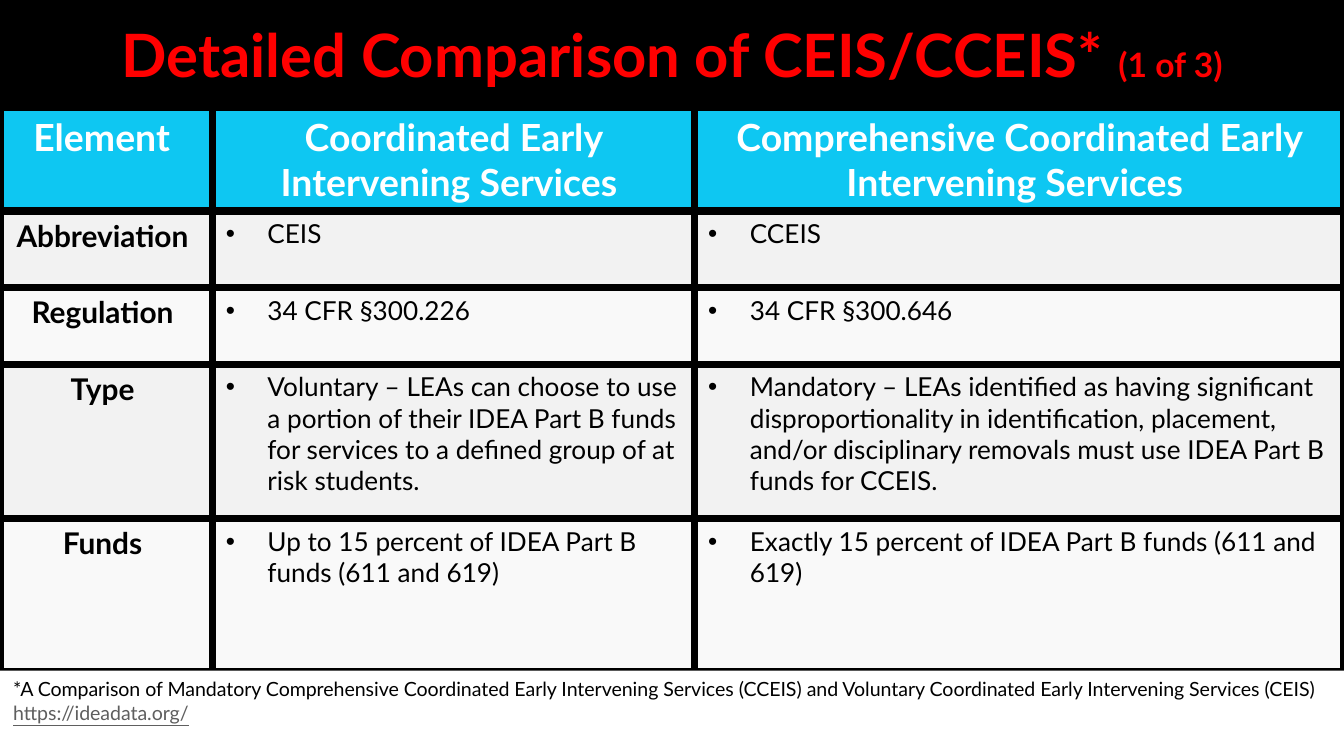
from lxml.etree import SubElement
from pptx import Presentation
from pptx.dml.color import RGBColor
from pptx.enum.shapes import MSO_SHAPE
from pptx.enum.text import MSO_ANCHOR, MSO_AUTO_SIZE, PP_ALIGN
from pptx.oxml import parse_xml
from pptx.oxml.ns import nsdecls, qn
from pptx.util import Inches, Pt

COLORS = {
    "black": "000000", "white": "FFFFFF", "red": "FF0000", "header": "0EC7F2",
    "odd": "F2F2F2", "even": "F9F9F9", "link": "5F5F5F",
}
ROWS = [
    ("Element ", "Coordinated Early Intervening Services ",
     "Comprehensive Coordinated Early Intervening Services "),
    ("Abbreviation ", "CEIS", "CCEIS"),
    ("Regulation ", "34 CFR §300.226", "34 CFR §300.646"),
    ("Type ",
     "Voluntary – LEAs can choose to use a portion of their IDEA Part B funds "
     "for services to a defined group of at risk students.",
     "Mandatory – LEAs identified as having significant disproportionality in "
     "identification, placement, and/or disciplinary removals must use IDEA Part B "
     "funds for CCEIS."),
    ("Funds ", "Up to 15 percent of IDEA Part B funds (611 and 619)",
     "Exactly 15 percent of IDEA Part B funds (611 and 619)"),
]
COL_WIDTHS = [1.58, 3.59, 4.83]
ROW_HEIGHTS = [0.76, 0.57, 0.57, 1.15, 1.14]


def add_run(p, text, color, **fmt):
    r = p.add_run()
    r.text = text
    r.font.color.rgb = RGBColor.from_string(COLORS[color])
    for name, value in {"name": "Lato", **fmt}.items():
        setattr(r.font, name, value)


def set_fill(item, color):
    item.fill.solid()
    item.fill.fore_color.rgb = RGBColor.from_string(COLORS[color])


prs = Presentation()
prs.slide_width = Inches(10)
prs.slide_height = prs.slide_width * 9 // 16
s = prs.slides.add_slide(prs.slide_layouts[5])

title = s.shapes.title
title.left, title.top, title.width, title.height = 0, 0, Inches(10), Inches(0.8)
set_fill(title, "black")
tf = title.text_frame
frame = {
    "auto_size": MSO_AUTO_SIZE.NONE, "vertical_anchor": MSO_ANCHOR.MIDDLE,
    "margin_left": Inches(0.5), "margin_right": Inches(0.5),
    "margin_top": 0, "margin_bottom": 0, "word_wrap": True,
}
for name, value in frame.items():
    setattr(tf, name, value)
p = tf.paragraphs[0]
p.alignment = PP_ALIGN.CENTER
add_run(p, "Detailed Comparison of CEIS/CCEIS* ", "red", size=Pt(32), bold=True)
add_run(p, "(1 of 3)", "red", size=Pt(18), bold=True)

table = s.shapes.add_table(len(ROWS), len(COL_WIDTHS), 0, Inches(0.8),
                           Inches(10), Inches(sum(ROW_HEIGHTS))).table
for column, width in zip(table.columns, COL_WIDTHS):
    column.width = Inches(width)
for row, height in zip(table.rows, ROW_HEIGHTS):
    row.height = Inches(height)

for i, texts in enumerate(ROWS):
    fill = "header" if i == 0 else "odd" if i % 2 else "even"
    for j, text in enumerate(texts):
        cell = table.cell(i, j)
        set_fill(cell, fill)
        tcPr = cell._tc.get_or_add_tcPr()
        for k, side in enumerate(("lnL", "lnR", "lnT", "lnB")):
            tcPr.insert(k, parse_xml(
                f'<a:{side} {nsdecls("a")} w="{Pt(4.5)}"><a:solidFill>'
                f'<a:srgbClr val="{COLORS["black"]}"/></a:solidFill></a:{side}>'))
        p = cell.text_frame.paragraphs[0]
        if i == 0 or j == 0:
            p.alignment = PP_ALIGN.CENTER
        else:
            pPr = p._p.get_or_add_pPr()
            pPr.set("marL", str(Inches(0.31)))
            pPr.set("indent", str(-Inches(0.31)))
            SubElement(pPr, qn("a:buFont"), typeface="Arial")
            SubElement(pPr, qn("a:buChar"), char="•")
        add_run(p, text, "white" if i == 0 else "black",
                size=Pt(20 if i == 0 else 16 if j == 0 else 14),
                bold=i == 0 or j == 0)

note = s.shapes.add_shape(MSO_SHAPE.RECTANGLE, 0, Inches(4.99), Inches(10), Inches(0.63))
note.shadow.inherit = False
set_fill(note, "white")
note.line.fill.background()
tf = note.text_frame
tf.word_wrap = True
tf.vertical_anchor = MSO_ANCHOR.TOP
p = tf.paragraphs[0]
p.alignment = PP_ALIGN.LEFT
add_run(p, "*A Comparison of Mandatory Comprehensive Coordinated Early Intervening Services "
        "(CCEIS) and Voluntary Coordinated Early Intervening Services (CEIS) ",
        "black", size=Pt(10.5))
add_run(p, "https://ideadata.org/", "link", size=Pt(10.5), underline=True)

prs.save("out.pptx")
